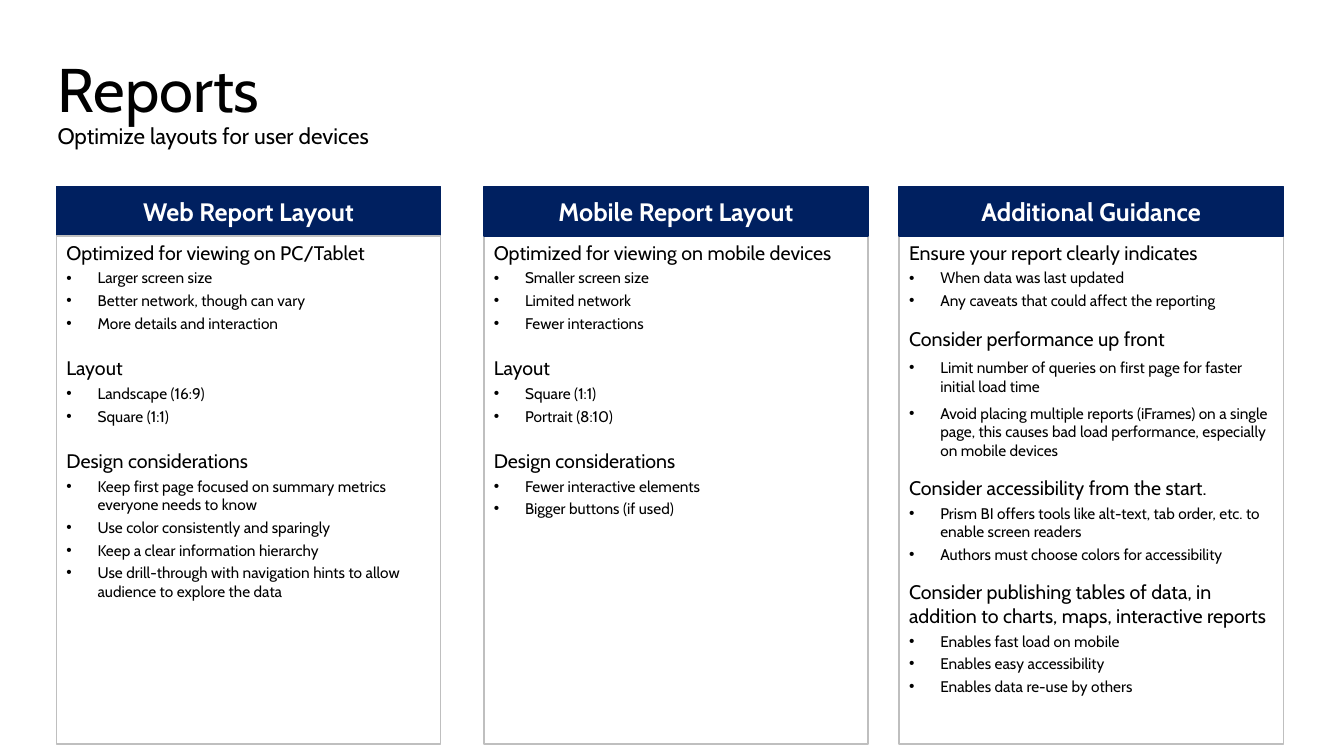
from dataclasses import dataclass

import pptx
import pptx.dml.color
import pptx.enum.shapes
import pptx.enum.text
import pptx.oxml
import pptx.oxml.ns
import pptx.util
from pptx.shapes.autoshape import Shape
from pptx.slide import Slide
from pptx.text.text import _Paragraph as Paragraph

FONT = "Cabin"
NAVY, GREY, WHITE, BLACK = "002060", "BFBFBF", "FFFFFF", "000000"
SLIDE_WIDTH = pptx.util.Inches(13.33)
SLIDE_HEIGHT = pptx.util.Inches(7.5)
BULLET_INDENT = pptx.util.Inches(0.31)

# Shares of the slide's width and height, in percent
PANEL_WIDTH = 28.58
HEADER_TOP, HEADER_HEIGHT = 24.67, 6.53
BODY_TOP, BODY_HEIGHT = HEADER_TOP + HEADER_HEIGHT, 67.2
TITLE_BOX = (3.53, 4.13, 86.27, 19.33)


@dataclass(frozen=True)
class Section:
    heading: str
    bullets: tuple[str, ...]
    bullet_gap: int = 3


@dataclass(frozen=True)
class Panel:
    left: float
    title: str
    sections: tuple[Section, ...]
    section_gap: int = 17


PANELS = (
    Panel(4.2, "Web Report Layout", (
        Section("Optimized for viewing on PC/Tablet", (
            "Larger screen size",
            "Better network, though can vary",
            "More details and interaction")),
        Section("Layout", ("Landscape (16:9)", "Square (1:1)")),
        Section("Design considerations", (
            "Keep first page focused on summary metrics everyone needs to know",
            "Use color consistently and sparingly",
            "Keep a clear information hierarchy",
            "Use drill-through with navigation hints to allow audience to explore the data")),
    )),
    Panel(36, "Mobile Report Layout", (
        Section("Optimized for viewing on mobile devices", (
            "Smaller screen size", "Limited network", "Fewer interactions")),
        Section("Layout", ("Square (1:1)", "Portrait (8:10)")),
        Section("Design considerations", (
            "Fewer interactive elements", "Bigger buttons (if used)")),
    )),
    Panel(66.9, "Additional Guidance", (
        Section("Ensure your report clearly indicates", (
            "When data was last updated",
            "Any caveats that could affect the reporting")),
        Section("Consider performance up front", (
            "Limit number of queries on first page for faster initial load time",
            "Avoid placing multiple reports (iFrames) on a single page, "
            "this causes bad load performance, especially on mobile devices"),
            bullet_gap=6),
        Section("Consider accessibility from the start.", (
            "Prism BI offers tools like alt-text, tab order, etc. to enable screen readers",
            "Authors must choose colors for accessibility")),
        Section("Consider publishing tables of data, in addition to charts, maps, "
                "interactive reports", (
            "Enables fast load on mobile",
            "Enables easy accessibility",
            "Enables data re-use by others")),
    ), section_gap=12),
)


def color(value: str) -> pptx.dml.color.RGBColor:
    return pptx.dml.color.RGBColor.from_string(value)


def place(left: float, top: float, width: float, height: float) -> tuple[int, int, int, int]:
    """Turn percentages of the slide into lengths."""
    return (round(SLIDE_WIDTH * left / 100), round(SLIDE_HEIGHT * top / 100),
            round(SLIDE_WIDTH * width / 100), round(SLIDE_HEIGHT * height / 100))


def add_run(paragraph: Paragraph, text: str, size: int,
            font_color: str = BLACK, bold: bool = False) -> None:
    run = paragraph.add_run()
    run.text = text
    run.font.name = FONT
    run.font.size = pptx.util.Pt(size)
    run.font.bold = bold
    run.font.color.rgb = color(font_color)


def add_bullet_mark(paragraph: Paragraph) -> None:
    properties = paragraph._p.get_or_add_pPr()
    properties.set("marL", str(BULLET_INDENT))
    properties.set("indent", str(-BULLET_INDENT))
    namespace = pptx.oxml.ns.nsdecls("a")
    properties.append(pptx.oxml.parse_xml(f'<a:buFont {namespace} typeface="Arial"/>'))
    properties.append(pptx.oxml.parse_xml(f'<a:buChar {namespace} char="•"/>'))


def add_box(slide: Slide, left: float, top: float, height: float, line_color: str) -> Shape:
    shape = slide.shapes.add_shape(
        pptx.enum.shapes.MSO_SHAPE.RECTANGLE, *place(left, top, PANEL_WIDTH, height))
    shape.shadow.inherit = False
    shape.line.color.rgb = color(line_color)
    shape.line.width = pptx.util.Pt(1)
    shape.text_frame.word_wrap = True
    return shape


def add_header(slide: Slide, panel: Panel) -> None:
    shape = add_box(slide, panel.left, HEADER_TOP, HEADER_HEIGHT, NAVY)
    shape.fill.solid()
    shape.fill.fore_color.rgb = color(NAVY)
    shape.text_frame.vertical_anchor = pptx.enum.text.MSO_ANCHOR.MIDDLE
    paragraph = shape.text_frame.paragraphs[0]
    paragraph.alignment = pptx.enum.text.PP_ALIGN.CENTER
    add_run(paragraph, panel.title, 18, WHITE, bold=True)


def add_body(slide: Slide, panel: Panel) -> None:
    shape = add_box(slide, panel.left, BODY_TOP, BODY_HEIGHT, GREY)
    shape.fill.background()
    frame = shape.text_frame
    frame.vertical_anchor = pptx.enum.text.MSO_ANCHOR.TOP
    for index, section in enumerate(panel.sections):
        heading = frame.add_paragraph() if index else frame.paragraphs[0]
        heading.alignment = pptx.enum.text.PP_ALIGN.LEFT
        heading.space_before = pptx.util.Pt(panel.section_gap if index else 0)
        add_run(heading, section.heading, 14)
        for text in section.bullets:
            bullet = frame.add_paragraph()
            bullet.alignment = pptx.enum.text.PP_ALIGN.LEFT
            bullet.space_before = pptx.util.Pt(section.bullet_gap)
            add_bullet_mark(bullet)
            add_run(bullet, text, 11)


def fill_title(slide: Slide) -> None:
    title = slide.shapes.title
    title.left, title.top, title.width, title.height = place(*TITLE_BOX)
    frame = title.text_frame
    frame.word_wrap = True
    frame.auto_size = pptx.enum.text.MSO_AUTO_SIZE.NONE
    frame.vertical_anchor = pptx.enum.text.MSO_ANCHOR.MIDDLE
    paragraph = frame.paragraphs[0]
    paragraph.alignment = pptx.enum.text.PP_ALIGN.LEFT
    paragraph.line_spacing = 0.9
    add_run(paragraph, "Reports", 44)
    paragraph.add_line_break()
    add_run(paragraph, "Optimize layouts for user devices", 16)


def main() -> None:
    presentation = pptx.Presentation()
    presentation.slide_width = SLIDE_WIDTH
    presentation.slide_height = SLIDE_HEIGHT
    slide = presentation.slides.add_slide(presentation.slide_layouts.get_by_name("Title Only"))
    fill_title(slide)
    # The first header lies behind its body, the others in front
    add_header(slide, PANELS[0])
    for panel in PANELS:
        add_body(slide, panel)
    for panel in PANELS[1:]:
        add_header(slide, panel)
    presentation.save("out.pptx")


if __name__ == "__main__":
    main()
